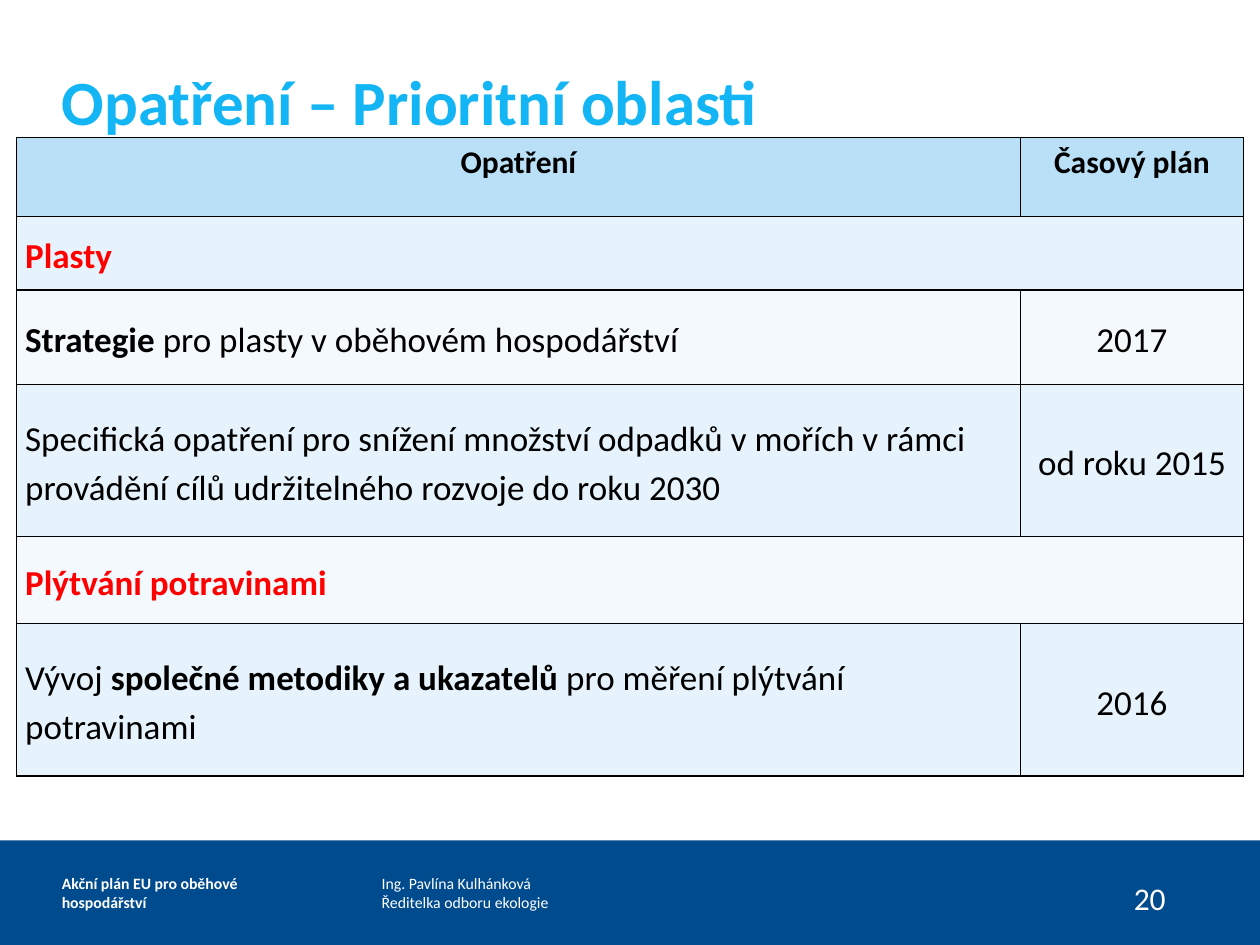
"""Build the slide on measures in priority areas of the circular economy."""
from lxml.etree import SubElement
from pptx import Presentation
from pptx.dml.color import RGBColor
from pptx.enum.shapes import MSO_SHAPE as Kind
from pptx.enum.text import MSO_ANCHOR as Anchor, MSO_AUTO_SIZE as Auto, PP_ALIGN as Align
from pptx.oxml import parse_xml
from pptx.oxml.ns import nsdecls, qn
from pptx.util import Inches, Pt

TITLE = "Opatření – Prioritní oblasti"
HEAD = ("Opatření", "Časový plán")
ROWS = [
    (0.58, "Plasty", None),
    (0.75, "**Strategie **pro plasty v oběhovém hospodářství", "2017"),
    (1.21, "Specifická opatření pro snížení množství odpadků v mořích v rámci "
           "provádění cílů udržitelného rozvoje do roku 2030", "od roku 2015"),
    (0.69, "Plýtvání potravinami", None),
    (1.21, "Vývoj **společné metodiky a ukazatelů** pro měření plýtvání potravinami", "2016"),
]
COLS = (7.97, 1.77)
HEAD_H = 0.63
FOOT = [
    ((3.03, 6.67, 1.97, 0.83), ["Ing. Pavlína Kulhánková", "Ředitelka odboru ekologie"],
     {"size": 9, "color": "FFFFFF"}),
    ((0.49, 6.67, 2.05, 0.83), ["Akční plán EU pro oběhové hospodářství"],
     {"size": 9, "color": "FFFFFF", "bold": True}),
]
PAGE = ((8.9, 6.93, 0.5, 0.4), ["20"], {"size": 18, "color": "FFFFFF"})
BANDS = ("E6F3FC", "F3F9FD")
NO_PAD = dict.fromkeys(("margin_left", "margin_top", "margin_right", "margin_bottom"), 0)
CELL_PAD = {"margin_left": Inches(0.07), "margin_right": Inches(0.07),
            "margin_top": 0, "margin_bottom": 0, "vertical_anchor": Anchor.MIDDLE}


def rgb(code):
    """Turn a hex string into a colour."""
    return RGBColor.from_string(code)


def apply(item, values):
    """Set each named attribute."""
    for name, value in values.items():
        setattr(item, name, value)


def paint(item, code):
    """Give a shape, cell or background a solid fill."""
    item.fill.solid()
    item.fill.fore_color.rgb = rgb(code)


def write(par, text, size, color, bold=False, **form):
    """Write runs, switching bold at each double star."""
    apply(par, form)
    for i, part in enumerate(text.split("**")):
        if part:
            run = par.add_run()
            run.text = part
            apply(run.font, {"name": "Calibri", "size": Pt(size), "bold": bold or i % 2 == 1})
            run.font.color.rgb = rgb(color)


def add_text(slide, box, lines, look, form):
    """Add a wrapped text box."""
    frame = slide.shapes.add_textbox(*map(Inches, box)).text_frame
    apply(frame, {"word_wrap": True, **form})
    for i, line in enumerate(lines):
        write(frame.add_paragraph() if i else frame.paragraphs[0], line, **look)


def edge(cell):
    """Draw a thin black line on the four sides of a cell."""
    props = cell._tc.get_or_add_tcPr()
    for i, side in enumerate("LRTB"):
        line = parse_xml(f'<a:ln{side} {nsdecls("a")} w="12700"/>')
        SubElement(SubElement(line, qn("a:solidFill")), qn("a:srgbClr"), val="000000")
        props.insert(i, line)


def add_grid(slide):
    """Add the table of measures and dates."""
    highs = [HEAD_H] + [row[0] for row in ROWS]
    area = (0.13, 1.09, sum(COLS), sum(highs))
    grid = slide.shapes.add_table(len(highs), len(COLS), *map(Inches, area)).table
    for col, wide in zip(grid.columns, COLS):
        col.width = Inches(wide)
    for row, high in zip(grid.rows, highs):
        row.height = Inches(high)
    for c, text in enumerate(HEAD):
        cell = grid.cell(0, c)
        paint(cell, "B9E0F7")
        write(cell.text_frame.paragraphs[0], text, 18, "000000", True, alignment=Align.CENTER)
    for r, (_, *texts) in enumerate(ROWS, 1):
        group = texts[1] is None
        if group:
            grid.cell(r, 0).merge(grid.cell(r, 1))
        for c, text in enumerate(texts):
            cell = grid.cell(r, c)
            paint(cell, BANDS[(r - 1) % 2])
            apply(cell, CELL_PAD)
            if text:
                write(cell.text_frame.paragraphs[0], text, 20, "FF0000" if group else "000000",
                      group, line_spacing=1.15, alignment=Align.CENTER if c else Align.LEFT)
    for cell in grid.iter_cells():
        edge(cell)


def main():
    """Build and save the slide."""
    deck = Presentation()
    apply(deck, {"slide_width": Inches(10), "slide_height": Inches(7.5)})
    slide = deck.slides.add_slide(deck.slide_layouts[5])
    paint(slide.background, "004B8D")
    panel = slide.shapes.add_shape(Kind.RECTANGLE, 0, 0, Inches(10), Inches(6.67))
    panel.shadow.inherit = False
    paint(panel, "FFFFFF")
    panel.line.fill.background()
    middle = {**NO_PAD, "vertical_anchor": Anchor.MIDDLE}
    for item in FOOT:
        add_text(slide, *item, middle)
    add_text(slide, *PAGE, {})
    add_grid(slide)
    title = slide.shapes.title
    place = zip(("left", "top", "width", "height"), map(Inches, (0.49, 0.49, 9.01, 0.61)))
    apply(title, dict(place))
    apply(title.text_frame, {**middle, "word_wrap": True, "auto_size": Auto.SHAPE_TO_FIT_TEXT})
    write(title.text_frame.paragraphs[0], TITLE, 36, "13B5F4", True, alignment=Align.LEFT)
    slide.shapes._spTree.append(title._element)
    deck.save("out.pptx")


if __name__ == "__main__":
    main()
